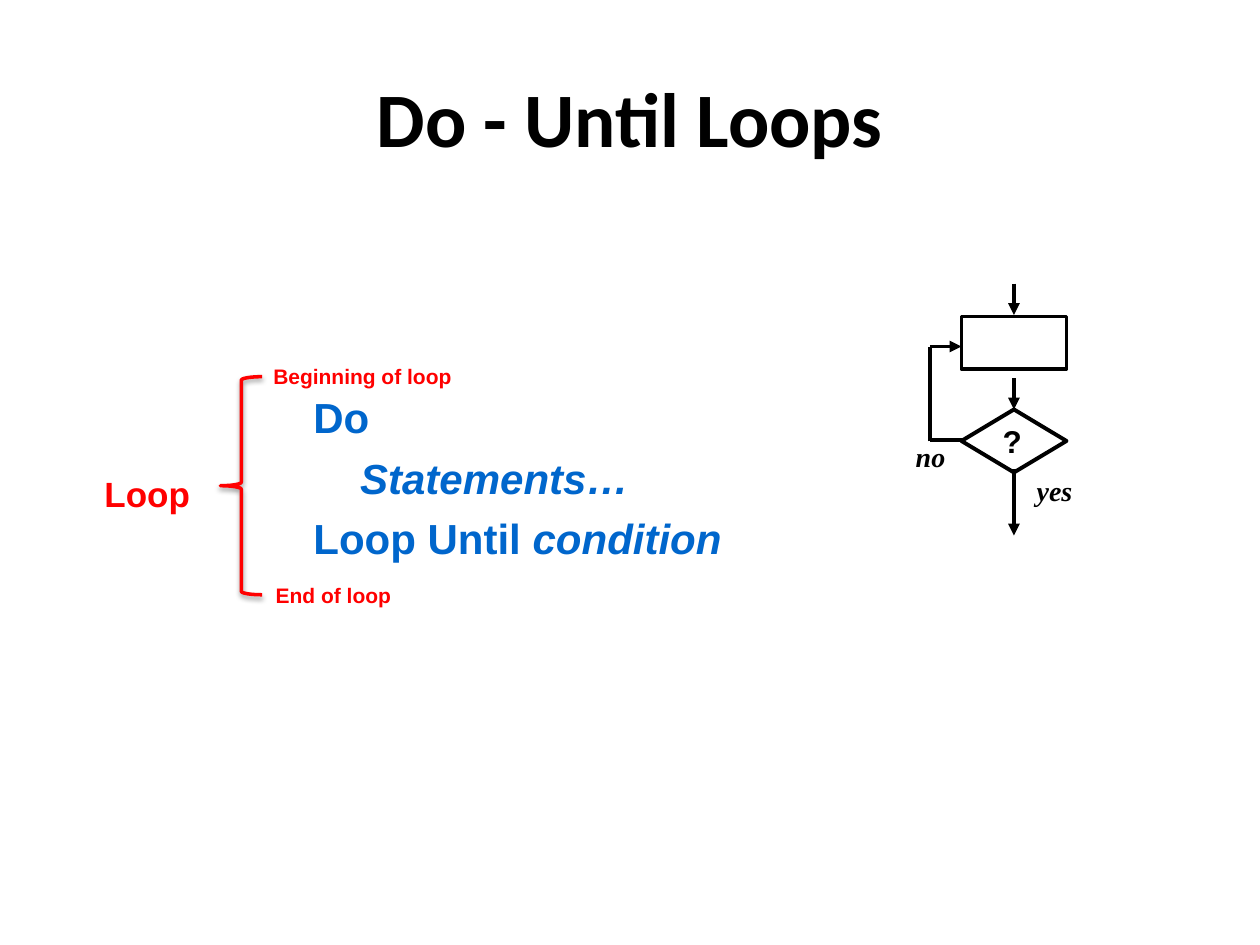
from lxml.etree import SubElement
from pptx import Presentation
from pptx.dml.color import RGBColor
from pptx.enum.shapes import MSO_CONNECTOR, MSO_SHAPE
from pptx.enum.text import MSO_ANCHOR, PP_ALIGN
from pptx.oxml.ns import qn
from pptx.util import Pt

COLORS = {"ink": "000000", "paper": "FFFFFF", "code": "0066CC", "loop": "FF0000"}


def rgb(name):
    return RGBColor.from_string(COLORS[name])


def add_run(p, text, size, color, font="Arial", italic=False):
    r = p.add_run()
    r.text = text
    r.font.name = font
    r.font.size = Pt(size)
    r.font.bold = True
    r.font.italic = italic
    r.font.color.rgb = rgb(color)


def add_box(shapes, x, y, w, h, wrap=True):
    tf = shapes.add_textbox(Pt(x), Pt(y), Pt(w), Pt(h)).text_frame
    tf.word_wrap = wrap
    return tf


def add_label(shapes, x, y, w, h, text, size, color, **style):
    tf = add_box(shapes, x, y, w, h, wrap=False)
    add_run(tf.paragraphs[0], text, size, color, **style)


def add_line(shapes, x1, y1, x2, y2, arrow=False):
    line = shapes.add_connector(MSO_CONNECTOR.STRAIGHT, Pt(x1), Pt(y1), Pt(x2), Pt(y2))
    line.line.color.rgb = rgb("ink")
    line.line.width = Pt(2.25)
    if arrow:
        SubElement(line.line._get_or_add_ln(), qn("a:tailEnd"), type="triangle")
    SubElement(line._element.spPr, qn("a:effectLst"))


def add_node(shapes, kind, x, y, w, h):
    sp = shapes.add_shape(kind, Pt(x), Pt(y), Pt(w), Pt(h))
    sp.shadow.inherit = False
    sp.fill.solid()
    sp.fill.fore_color.rgb = rgb("paper")
    sp.line.color.rgb = rgb("ink")
    sp.line.width = Pt(2.25)


def add_title(slide, x, y, w, h):
    tf = add_box(slide.shapes, x, y, w, h)
    tf.vertical_anchor = MSO_ANCHOR.MIDDLE
    p = tf.paragraphs[0]
    p.alignment = PP_ALIGN.CENTER
    add_run(p, "Do - Until Loops", 44, "ink", font="Calibri")


def add_code(slide, x, y, w, h):
    tf = add_box(slide.shapes, x, y, w, h)
    lines = [
        (0, [("Do", False)]),
        (26.7, [("Statements…", True)]),
        (0, [("Loop Until ", False), ("condition", True)]),
    ]
    for i, (indent, runs) in enumerate(lines):
        p = tf.add_paragraph() if i else tf.paragraphs[0]
        p.space_before = Pt(5.8 if i else 0)
        p._p.get_or_add_pPr().set("marL", str(Pt(indent)))
        for text, italic in runs:
            add_run(p, text, 24, "code", italic=italic)


def add_flowchart(slide, x, y, w, h):
    shapes = slide.shapes.add_group_shape().shapes
    node_w, node_x = 60, x + 33.2
    mid = node_x + node_w / 2
    back_x, back_top, back_bottom = x + 15.1, y + 36, y + 89.5
    add_line(shapes, mid, y, mid, y + 18, arrow=True)
    add_node(shapes, MSO_SHAPE.FLOWCHART_DECISION, node_x, y + 72, node_w, 36)
    add_line(shapes, mid, y + 54, mid, y + 72, arrow=True)
    add_node(shapes, MSO_SHAPE.FLOWCHART_PROCESS, node_x, y + 18.9, node_w, 30)
    add_line(shapes, node_x + 2, back_bottom, back_x, back_bottom)
    add_line(shapes, back_x, back_bottom + 0.7, back_x, back_top)
    add_line(shapes, back_x, back_top, node_x, back_top, arrow=True)
    add_line(shapes, mid, y + 105.8, mid, y + h, arrow=True)
    for text, dx, dy in (("yes", w - 41.8, 105.1), ("no", 0, 85.7)):
        add_label(shapes, x + dx, y + dy, 41.8, 26.6, text, 16, "ink",
                  font="Times New Roman", italic=True)
    add_label(shapes, x + 49.7, y + 75.6, 26.6, 28.8, "?", 18, "ink")


def add_loop_brace(slide, x, y, w, h):
    shapes = slide.shapes.add_group_shape().shapes
    brace = shapes.add_shape(MSO_SHAPE.LEFT_BRACE, Pt(x + 73.4), Pt(y + 10.8),
                             Pt(23.8), Pt(h - 21.6))
    brace.shadow.inherit = False
    brace.fill.background()
    brace.line.color.rgb = rgb("loop")
    brace.line.width = Pt(2)
    effects = brace._element.spPr.find(qn("a:effectLst"))
    shadow = SubElement(effects, qn("a:outerShdw"), blurRad=str(Pt(3.1)),
                        dist=str(Pt(1.6)), dir="5400000", rotWithShape="0")
    color = SubElement(shadow, qn("a:srgbClr"), val=COLORS["ink"])
    SubElement(color, qn("a:alpha"), val="38000")
    add_label(shapes, x, y + 61.9, 64, 31.7, "Loop", 20, "loop")
    add_label(shapes, x + 96.5, y, w - 96.5, 21.6, "Beginning of loop", 12, "loop")
    add_label(shapes, x + 97.9, y + h - 21.6, 81.4, 21.6, "End of loop", 12, "loop")


def main():
    prs = Presentation()
    prs.slide_width, prs.slide_height = Pt(720), Pt(540)
    slide = prs.slides.add_slide(prs.slide_layouts[6])
    add_title(slide, 36, 21.6, 648, 90)
    add_code(slide, 172, 220.3, 301.7, 126.7)
    add_flowchart(slide, 516.2, 162, 110.9, 144)
    add_loop_brace(slide, 52.6, 204.5, 213.8, 146.2)
    prs.save("out.pptx")


if __name__ == "__main__":
    main()
